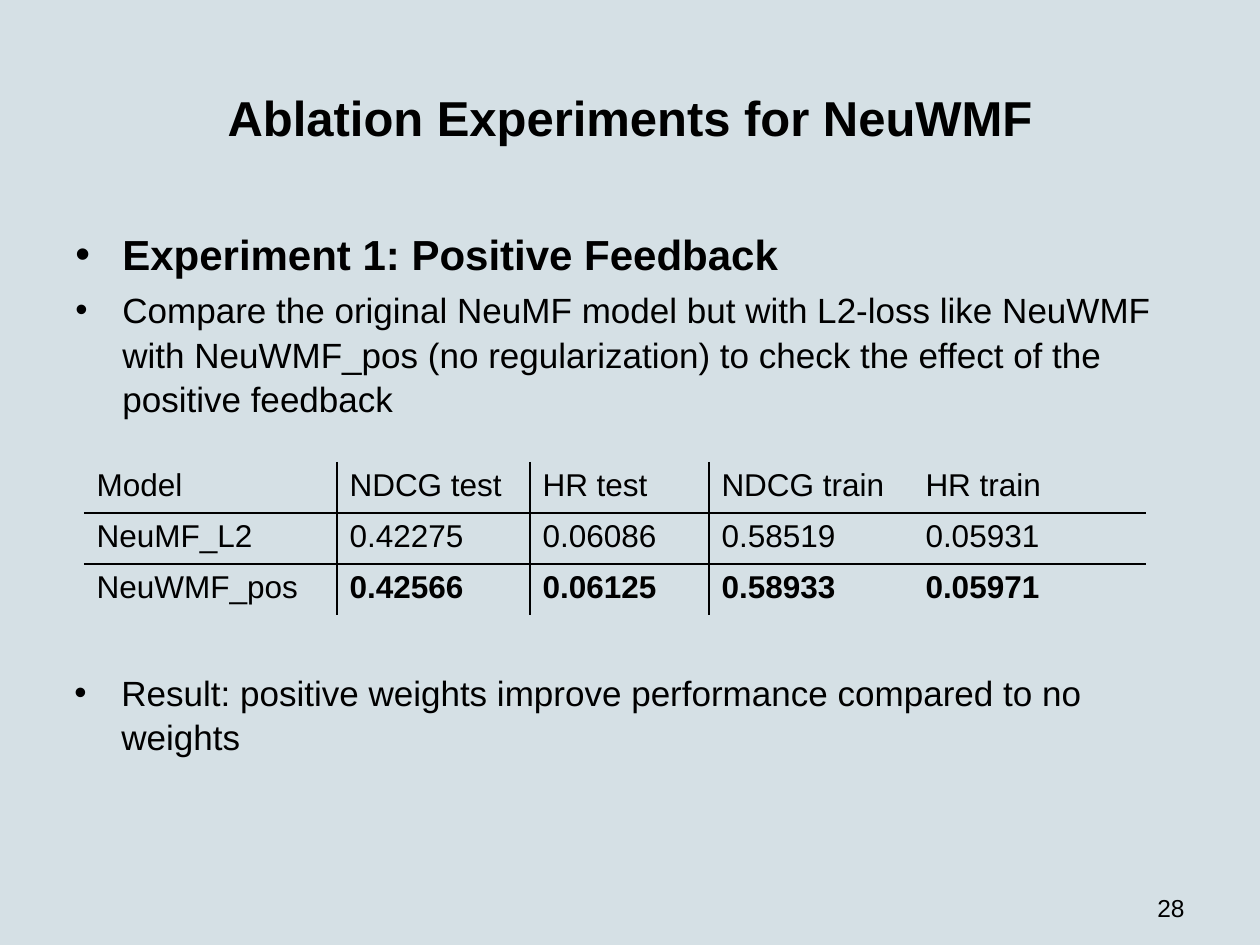
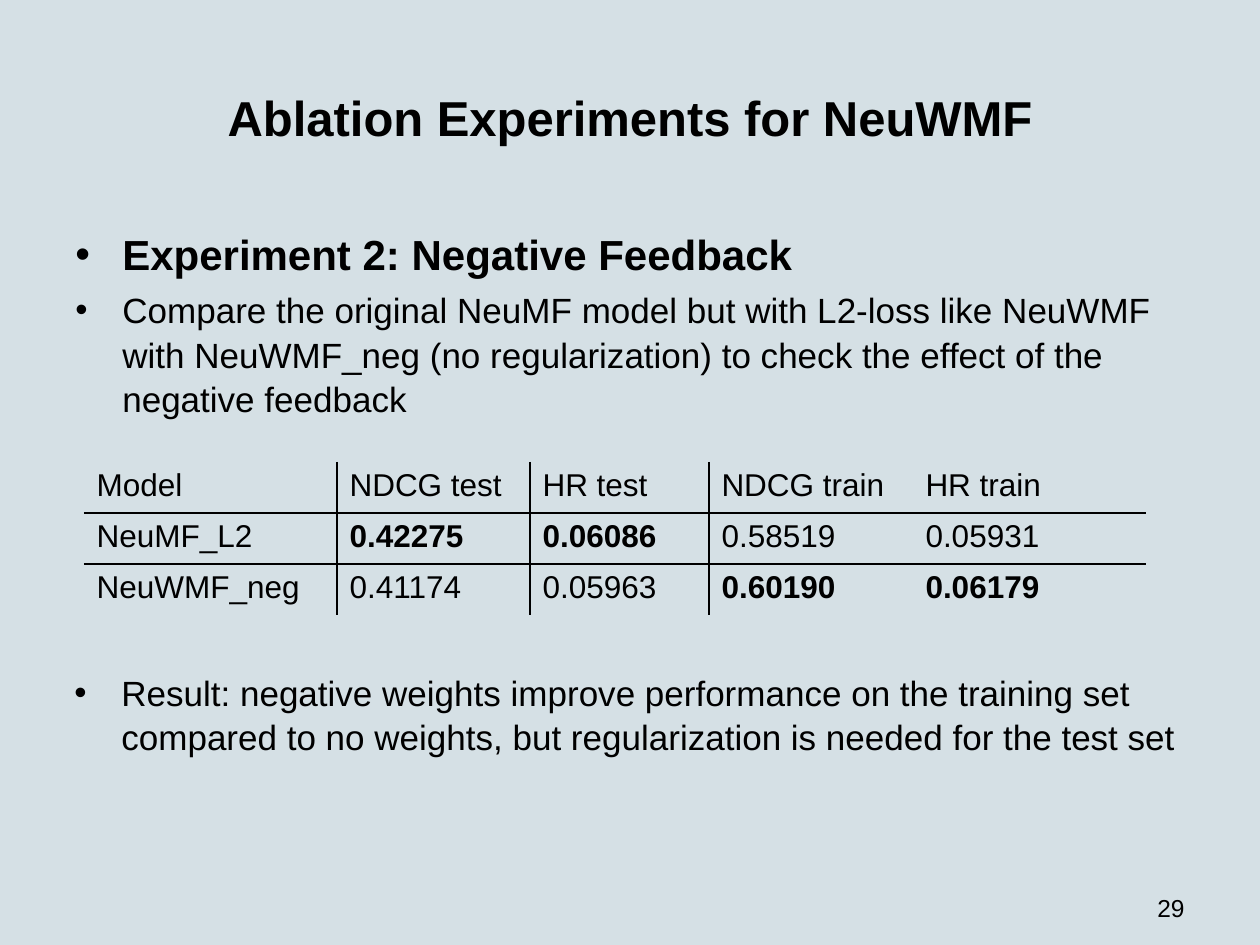
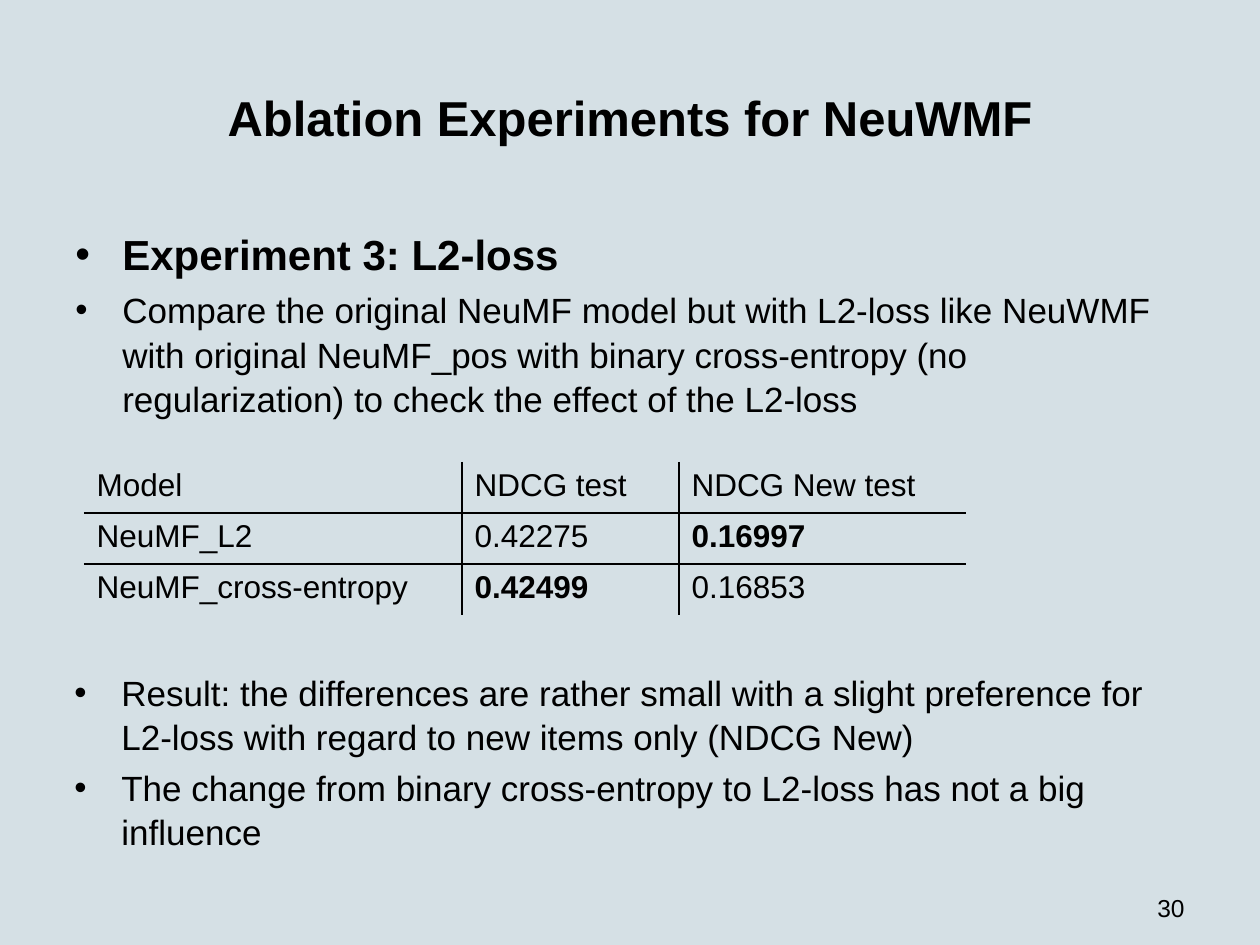
from pptx import Presentation
from pptx import util as u
from pptx.dml.color import RGBColor
from pptx.enum import text
from pptx.oxml import parse_xml
from pptx.oxml.ns import nsdecls

BACK = RGBColor(0xD5, 0xE0, 0xE5)
INK = RGBColor(0, 0, 0)
FONT = "Arial"
PX = u.Inches(1) / 126
PLAIN = "{2D5ABB26-0587-4C30-8999-92F81FD0307C}"

TITLE = "Ablation Experiments for NeuWMF"
FIRST = 28
COMPARE = "Compare the original NeuMF model but with L2-loss like NeuWMF with "
HEAD = ["Model", "NDCG test", "HR test", "NDCG train", "HR train"]
WIDE = [253, 193, 179, 204, 233]

PAGES = [
    {
        "head": "Experiment 1: Positive Feedback",
        "task": "NeuWMF_pos (no regularization) to check the effect of the positive feedback",
        "tall": 624,
        "cols": WIDE,
        "rows": [
            HEAD,
            ["NeuMF_L2", "0.42275", "0.06086", "0.58519", "0.05931"],
            ["NeuWMF_pos", "*0.42566", "*0.06125", "*0.58933", "*0.05971"],
        ],
        "result": ["Result: positive weights improve performance compared to no weights"],
    },
    {
        "head": "Experiment 2: Negative Feedback",
        "task": "NeuWMF_neg (no regularization) to check the effect of the negative feedback",
        "tall": 222,
        "cols": WIDE,
        "rows": [
            HEAD,
            ["NeuMF_L2", "*0.42275", "*0.06086", "0.58519", "0.05931"],
            ["NeuWMF_neg", "0.41174", "0.05963", "*0.60190", "*0.06179"],
        ],
        "result": ["Result: negative weights improve performance on the training set "
                   "compared to no weights, but regularization is needed for the test set"],
    },
    {
        "head": "Experiment 3: L2-loss",
        "task": "original NeuMF_pos with binary cross-entropy (no regularization) "
                "to check the effect of the L2-loss",
        "tall": 624,
        "cols": [378, 217, 287],
        "rows": [
            ["Model", "NDCG test", "NDCG New test"],
            ["NeuMF_L2", "0.42275", "*0.16997"],
            ["NeuMF_cross-entropy", "*0.42499", "0.16853"],
        ],
        "result": ["Result: the differences are rather small with a slight preference "
                   "for L2-loss with regard to new items only (NDCG New)",
                   "The change from binary cross-entropy to L2-loss has not a big influence"],
    },
]


def px(n):
    return u.Emu(round(n * PX))


def write(para, words, size, bold=False):
    run = para.add_run()
    run.text = words
    font = run.font
    font.name, font.size, font.bold = FONT, u.Pt(size), bold
    font.color.rgb = INK


def frame(slide, *area):
    tf = slide.shapes.add_textbox(*map(px, area)).text_frame
    tf.word_wrap = True
    return tf


def label(slide, area, words, size, align, bold=False):
    tf = frame(slide, *area)
    tf.paragraphs[0].alignment = align
    write(tf.paragraphs[0], words, size, bold)
    return tf


def bullets(slide, area, items):
    tf = frame(slide, *area)
    for i, (words, size, bold) in enumerate(items):
        para = tf.add_paragraph() if i else tf.paragraphs[0]
        para.line_spacing = 1.05
        para.space_before = para.space_after = u.Pt(size / 10)
        props = para._p.get_or_add_pPr()
        props.set("marL", str(px(47)))
        props.set("indent", str(-px(47)))
        props.append(parse_xml(f'<a:buFont {nsdecls("a")} typeface="{FONT}"/>'))
        props.append(parse_xml(f'<a:buChar {nsdecls("a")} char="•"/>'))
        write(para, words, size, bold)


def edge(cell, side):
    cell._tc.get_or_add_tcPr().append(parse_xml(
        f'<a:ln{side} {nsdecls("a")} w="{u.Pt(1)}"><a:solidFill>'
        f'<a:srgbClr val="{INK}"/></a:solidFill></a:ln{side}>'))


def grid(slide, cols, rows):
    high = 51
    area = 84, 462, sum(cols), high * len(rows)
    table = slide.shapes.add_table(len(rows), len(cols), *map(px, area)).table
    table.first_row = table.horz_banding = False
    table._tbl.tblPr.find("{*}tableStyleId").text = PLAIN
    for col, wide in zip(table.columns, cols):
        col.width = px(wide)
    for r, row in enumerate(rows):
        table.rows[r].height = px(high)
        for c, words in enumerate(row):
            cell = table.cell(r, c)
            write(cell.text_frame.paragraphs[0], words.lstrip("*"), 18, words.startswith("*"))
            sides = {"L": c in (1, 2), "R": c in (0, 1), "T": r > 0, "B": r < len(rows) - 1}
            for side, drawn in sides.items():
                if drawn:
                    edge(cell, side)
            cell.fill.background()


def build(deck, number, page):
    slide = deck.slides.add_slide(deck.slide_layouts[6])
    title = label(slide, (63, 38, 1134, 158), TITLE, 28, text.PP_ALIGN.CENTER, True)
    title.vertical_anchor = text.MSO_ANCHOR.MIDDLE
    bullets(slide, (63, 220, 1134, page["tall"]),
            [(page["head"], 24, True), (COMPARE + page["task"], 20, False)])
    foot = label(slide, (903, 861, 294, 66), str(number), 14, text.PP_ALIGN.RIGHT)
    foot.margin_top, foot.margin_bottom = px(35), 0
    grid(slide, page["cols"], page["rows"])
    bullets(slide, (62, 663, 1134, 227), [(words, 20, False) for words in page["result"]])


def main():
    deck = Presentation()
    deck.slide_width, deck.slide_height = px(1260), px(945)
    fill = deck.slide_master.background.fill
    fill.solid()
    fill.fore_color.rgb = BACK
    for number, page in enumerate(PAGES, FIRST):
        build(deck, number, page)
    deck.save("out.pptx")


if __name__ == "__main__":
    main()
